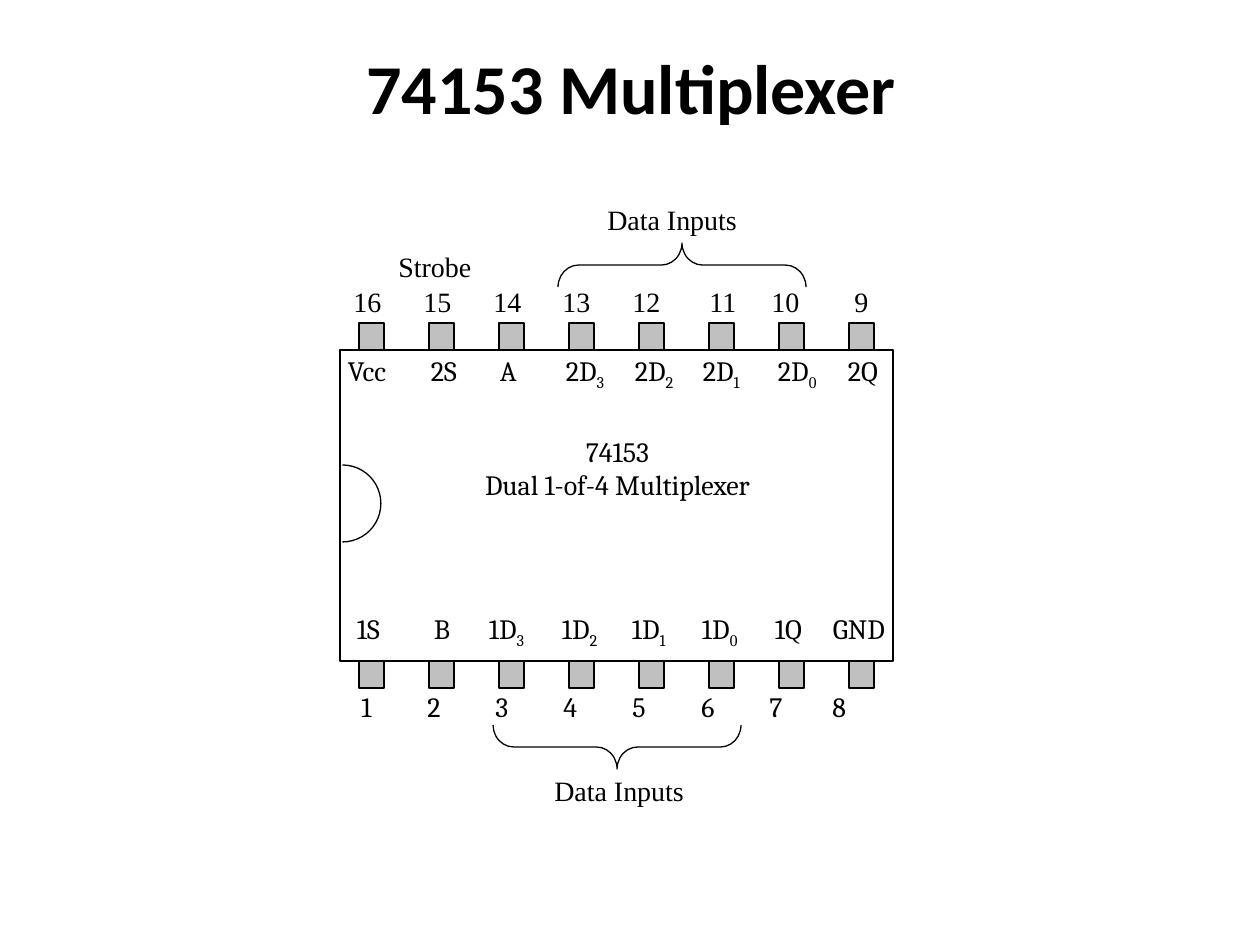
from lxml.etree import SubElement
from pptx import Presentation
from pptx.dml.color import RGBColor
from pptx.enum.shapes import MSO_SHAPE
from pptx.enum.text import PP_ALIGN
from pptx.oxml.ns import qn
from pptx.util import Emu, Pt

SCALE = 914400 / 126
BLACK = RGBColor(0, 0, 0)
WHITE = RGBColor(255, 255, 255)
GRAY = RGBColor(192, 192, 192)
SERIF = "Cambria"
TIMES = "Times New Roman"

prs = Presentation()
prs.slide_width, prs.slide_height = Emu(9144000), Emu(6858000)
s = prs.slides.add_slide(prs.slide_layouts[6])


def add_shape(kind, box, fill=None):
    sp = s.shapes.add_shape(kind, *[Emu(round(v * SCALE)) for v in box])
    sp.shadow.inherit = False
    if fill is None:
        sp.fill.background()
    else:
        sp.fill.solid()
        sp.fill.fore_color.rgb = fill
    sp.line.color.rgb = BLACK
    sp.line.width = Pt(0.75)
    return sp


def add_text(box, lines, font=SERIF, size=16, bold=False, align=PP_ALIGN.LEFT, inset=True):
    """Each line is a list of (text, font, is_subscript) runs, or a plain string."""
    tf = s.shapes.add_textbox(*[Emu(round(v * SCALE)) for v in box]).text_frame
    tf.word_wrap = True
    if not inset:
        tf.margin_left = tf.margin_right = tf.margin_top = tf.margin_bottom = 0
    for i, line in enumerate(lines):
        p = tf.add_paragraph() if i else tf.paragraphs[0]
        p.alignment = align
        for text, face, sub in [(line, font, False)] if isinstance(line, str) else line:
            r = p.add_run()
            r.text = text
            r.font.name, r.font.size, r.font.bold = face, Pt(size), bold
            r.font.color.rgb = BLACK
            if sub:
                r.font._element.set("baseline", "-25000")
    return tf


# Title
add_text((164, 38, 934, 97), ["74153 Multiplexer"], "Calibri", 40, True, PP_ALIGN.CENTER)

# Pins run behind the chip body
for i in range(8):
    add_shape(MSO_SHAPE.RECTANGLE, (359 + 70 * i, 323, 25, 365), GRAY)
add_shape(MSO_SHAPE.RECTANGLE, (340, 350, 553, 311), WHITE)

# Notch and chip name
notch = add_shape(MSO_SHAPE.ARC, (304, 465, 77, 77))
notch.adjustments[0], notch.adjustments[1] = 162, 54
add_text((441, 428, 353, 161), ["74153", "Dual 1-of-4 Multiplexer"], align=PP_ALIGN.CENTER)

# Signal labels: left edge, name, subscript
SIGNALS = {
    354: [(348, "Vcc", ""), (431, "2S", ""), (500, "A", ""), (566, "2D", "3"),
          (635, "2D", "2"), (703, "2D", "1"), (778, "2D", "0"), (848, "2Q", "")],
    612: [(357, "1S", ""), (434, "B", ""), (489, "1D", "3"), (562, "1D", "2"),
          (632, "1D", "1"), (702, "1D", "0"), (775, "1Q", ""), (833, "GND", "")],
}
for top, labels in SIGNALS.items():
    for left, name, sub in labels:
        runs = [(name, SERIF, False)]
        if sub:
            runs.append((sub, TIMES if sub == "0" else SERIF, True))
        add_text((left, top, 66, 45), [runs], inset=False)

# Pin numbers, spaced with tab stops
NUMBERS = [
    (341, 278, TIMES, range(16, 8, -1), [70, 140, 209, 279, 356, 418, 501]),
    (349, 683, SERIF, range(1, 9), [66, 134, 202, 271, 340, 408, 471]),
]
for left, top, font, pins, stops in NUMBERS:
    tf = add_text((left, top, 556, 49), ["\t".join(str(n) for n in pins)], font)
    tabs = SubElement(tf.paragraphs[0]._p.get_or_add_pPr(), qn("a:tabLst"))
    for stop in stops:
        SubElement(tabs, qn("a:tab"), pos=str(round(stop * SCALE)), algn="l")

# Braces over the data inputs
for box, angle in [((595, 623, 44, 248), 90), ((660, 141, 44, 248), 270)]:
    brace = add_shape(MSO_SHAPE.RIGHT_BRACE, box)
    brace.rotation = angle
    brace.adjustments[0], brace.adjustments[1] = 0.47, 0.5

# Group captions
for box, caption in [((542, 767, 161, 54), "Data Inputs"),
                     ((595, 196, 179, 54), "Data Inputs"),
                     ((386, 243, 117, 54), "Strobe")]:
    add_text(box, [caption], TIMES)

prs.save("out.pptx")
